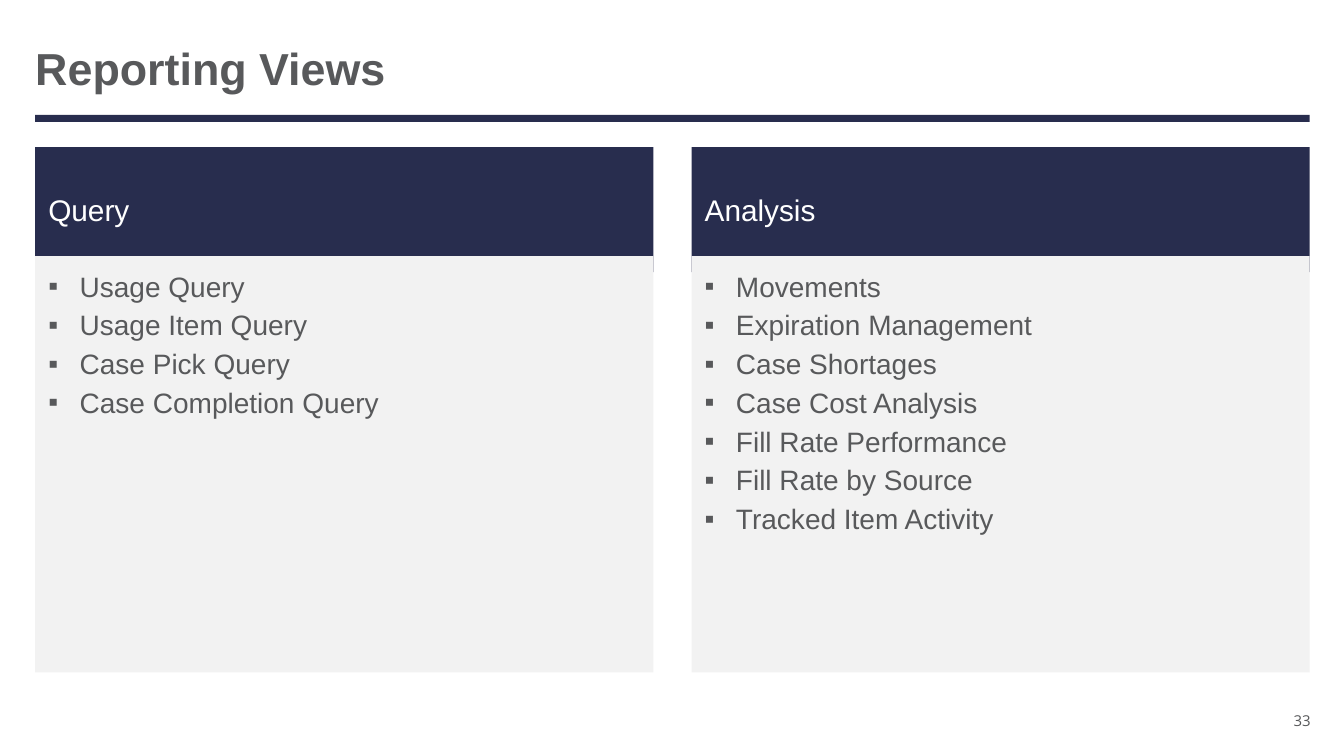
import pptx
import pptx.util
import pptx.dml.color
import pptx.enum.shapes
import pptx.enum.text
from lxml import etree

Inches = pptx.util.Inches
Pt = pptx.util.Pt
ALIGN = pptx.enum.text.PP_ALIGN
ANCHOR = pptx.enum.text.MSO_ANCHOR

COLORS = {"navy": "282D4E", "panel": "F2F2F2", "text": "58595B", "white": "FFFFFF"}
LEFT, WIDTH, GAP = 0.35, 12.64, 0.38
HEADER_H, BODY_TOP, BODY_H = 1.24, 1.08, 4.13
PANELS = {
    "Query": ["Usage Query", "Usage Item Query", "Case Pick Query", "Case Completion Query"],
    "Analysis": ["Movements", "Expiration Management", "Case Shortages", "Case Cost Analysis",
                 "Fill Rate Performance", "Fill Rate by Source", "Tracked Item Activity"],
}


def rgb(name):
    return pptx.dml.color.RGBColor.from_string(COLORS[name])


def add_box(slide, x, y, w, h, fill):
    sp = slide.shapes.add_shape(pptx.enum.shapes.MSO_SHAPE.RECTANGLE,
                                Inches(x), Inches(y), Inches(w), Inches(h))
    sp.shadow.inherit = False
    sp.fill.solid()
    sp.fill.fore_color.rgb = rgb(fill)
    sp.line.fill.background()
    return sp


def add_bullet(p):
    pPr = p._p.get_or_add_pPr()
    pPr.set("marL", str(Inches(0.31)))
    pPr.set("indent", str(-Inches(0.31)))
    ns = pptx.oxml.ns.qn
    etree.SubElement(pPr, ns("a:buFont")).set("typeface", "Arial")
    etree.SubElement(pPr, ns("a:buChar")).set("char", "▪")


def write(sp, text, size=20, color="text", font="Arial", bold=False, align=ALIGN.LEFT,
          anchor=ANCHOR.MIDDLE, inset=(0.13, 0.13), before=0, after=0, spacing=None,
          bullet=False):
    tf = sp.text_frame
    tf.word_wrap = True
    tf.vertical_anchor = anchor
    tf.margin_left = tf.margin_right = Inches(inset[0])
    tf.margin_top = tf.margin_bottom = Inches(inset[1])
    for i, line in enumerate(text.split("\n")):
        p = tf.add_paragraph() if i else tf.paragraphs[0]
        p.alignment = align
        p.space_before, p.space_after = Pt(before), Pt(after)
        p.line_spacing = spacing
        if bullet:
            add_bullet(p)
        r = p.add_run()
        r.text = line
        r.font.name, r.font.size, r.font.bold = font, Pt(size), bold
        r.font.color.rgb = rgb(color)


def add_label(slide, x, y, w, h, text, **fmt):
    sp = slide.shapes.add_textbox(Inches(x), Inches(y), Inches(w), Inches(h))
    write(sp, text, **fmt)


def add_title(slide, x, y, w):
    add_box(slide, x, y + 0.73, w, 0.07, "navy")
    add_label(slide, x, y, w, 0.61, "Reporting Views", size=32, bold=True,
              inset=(0, 0.05), spacing=0.85)


def add_panel(slide, x, y, w, heading, items):
    header = add_box(slide, x, y, w, HEADER_H, "navy")
    write(header, heading, size=21.3, color="white", before=2.7)
    body = add_box(slide, x, y + BODY_TOP, w, BODY_H, "panel")
    write(body, "\n".join(items), anchor=ANCHOR.TOP, before=2.7, after=1, bullet=True)


def add_page_number(slide, x, y, w, h):
    add_label(slide, x, y, w, h, "33", size=10.7, font="Open Sans",
              align=ALIGN.RIGHT, inset=(0, 0))


def main():
    prs = pptx.Presentation()
    prs.slide_width, prs.slide_height = Inches(13.33), Inches(7.5)
    slide = prs.slides.add_slide(prs.slide_layouts[6])
    add_title(slide, LEFT, 0.41, WIDTH)
    panel_w = (WIDTH - GAP) / 2
    for i, (heading, items) in enumerate(PANELS.items()):
        add_panel(slide, LEFT + i * (panel_w + GAP), 1.46, panel_w, heading, items)
    add_page_number(slide, 12.5, 6.92, 0.5, 0.46)
    prs.save("out.pptx")


if __name__ == "__main__":
    main()
